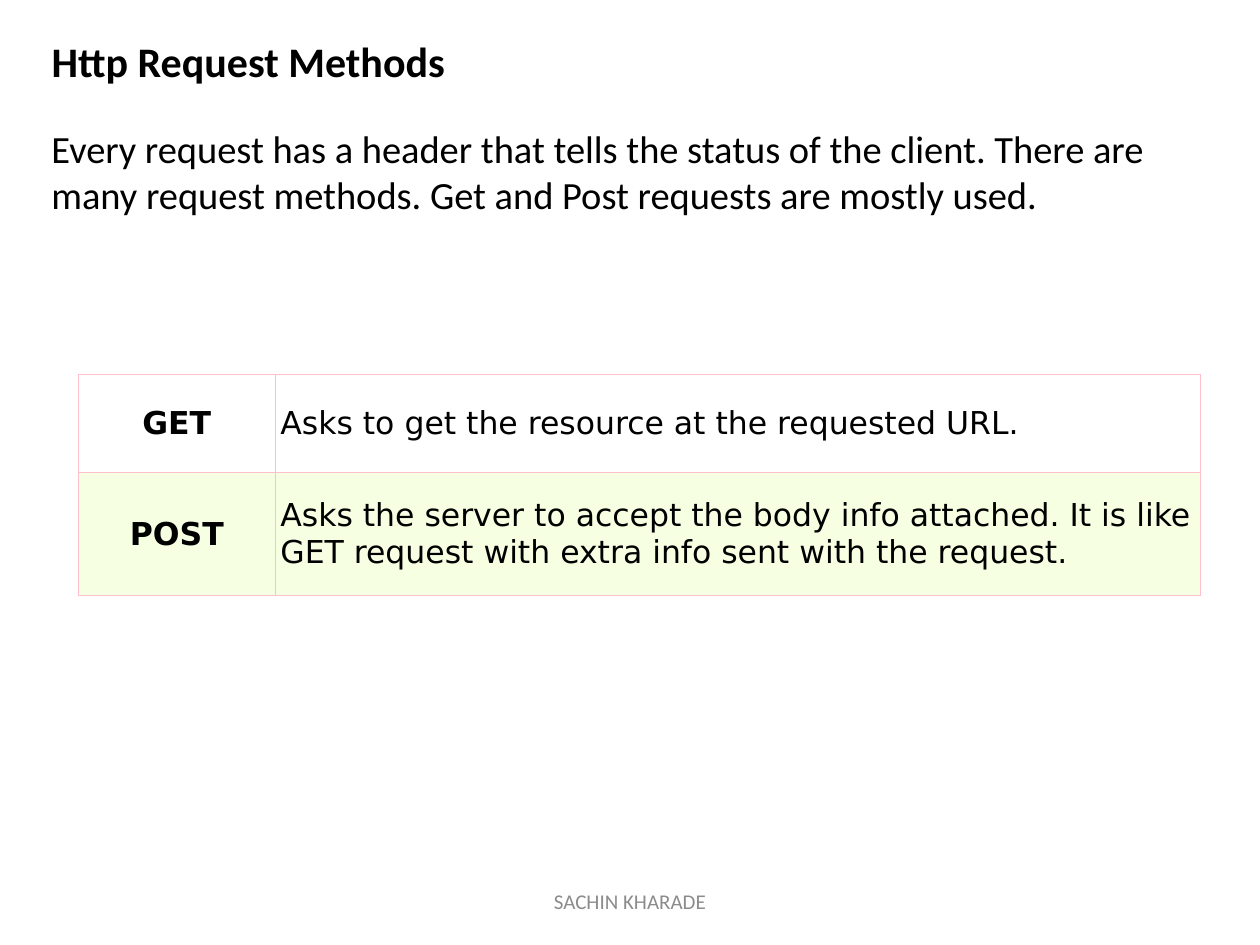
from dataclasses import dataclass

import pptx
import pptx.dml.color
import pptx.enum.text
import pptx.oxml.ns
import pptx.util
from lxml import etree

Pt = pptx.util.Pt
Align = pptx.enum.text.PP_ALIGN
Anchor = pptx.enum.text.MSO_ANCHOR

COLORS = {
    "text": "000000",
    "footer": "8C8C8C",
    "border": "FFC0CB",
    "plain": "FFFFFF",
    "tinted": "F6FFE1",
}
LEFT, WIDTH = 22.3, 663.8


@dataclass
class MethodRow:
    name: str
    description: str
    fill: str
    height: float


METHODS = [
    MethodRow("GET", "Asks to get the resource at the requested URL.", "plain", 56),
    MethodRow(
        "POST",
        "Asks the server to accept the body info attached. It is like "
        "GET request with extra info sent with the request.",
        "tinted", 70.5,
    ),
]
COLUMN_WIDTHS = [112.5, 528.5]


def rgb(color: str) -> pptx.dml.color.RGBColor:
    return pptx.dml.color.RGBColor.from_string(COLORS[color])


def write(frame, text: str, *, size: float, font: str = "Calibri", color: str = "text",
          bold: bool = False, align=Align.LEFT, anchor=Anchor.TOP) -> None:
    frame.word_wrap = True
    frame.vertical_anchor = anchor
    para = frame.paragraphs[0]
    para.alignment = align
    span = para.add_run()
    span.text = text
    span.font.size = Pt(size)
    span.font.name = font
    span.font.bold = bold
    span.font.color.rgb = rgb(color)


def add_text(page, left: float, top: float, width: float, height: float,
             text: str, **style) -> None:
    box = page.shapes.add_textbox(Pt(left), Pt(top), Pt(width), Pt(height))
    write(box.text_frame, text, **style)


def add_borders(cell) -> None:
    properties = cell._tc.get_or_add_tcPr()
    for side in ("a:lnL", "a:lnR", "a:lnT", "a:lnB"):
        line = etree.SubElement(properties, pptx.oxml.ns.qn(side), w=str(Pt(0.75)))
        fill = etree.SubElement(line, pptx.oxml.ns.qn("a:solidFill"))
        etree.SubElement(fill, pptx.oxml.ns.qn("a:srgbClr"), val=COLORS["border"])


def fill_cell(cell, text: str, fill: str, **style) -> None:
    cell.margin_left = cell.margin_right = Pt(3)
    cell.margin_top = cell.margin_bottom = Pt(3)
    write(cell.text_frame, text, size=18, font="DejaVu Sans", **style)
    cell.vertical_anchor = Anchor.MIDDLE
    add_borders(cell)
    cell.fill.solid()
    cell.fill.fore_color.rgb = rgb(fill)


def add_method_table(page, left: float, top: float, rows: list[MethodRow]) -> None:
    frame = page.shapes.add_table(
        len(rows), len(COLUMN_WIDTHS), Pt(left), Pt(top),
        Pt(sum(COLUMN_WIDTHS)), Pt(sum(row.height for row in rows)))
    table = frame.table
    table.first_row = table.horz_banding = False
    for column, width in zip(table.columns, COLUMN_WIDTHS):
        column.width = Pt(width)
    for index, row in enumerate(rows):
        table.rows[index].height = Pt(row.height)
        fill_cell(table.cell(index, 0), row.name, row.fill, bold=True, align=Align.CENTER)
        fill_cell(table.cell(index, 1), row.description, row.fill)


def main() -> None:
    deck = pptx.Presentation()
    deck.slide_width, deck.slide_height = Pt(720), Pt(540)
    page = deck.slides.add_slide(deck.slide_layouts[5])

    # Title
    title = page.shapes.title
    title.left, title.top = Pt(LEFT), Pt(16.6)
    title.width, title.height = Pt(WIDTH), Pt(36.5)
    title.text_frame.auto_size = pptx.enum.text.MSO_AUTO_SIZE.NONE
    write(title.text_frame, "Http Request Methods", size=24, bold=True)

    # Introduction
    add_text(page, LEFT, 67.8, WIDTH, 60.8,
             "Every request has a header that tells the status of the client. There are "
             "many request methods. Get and Post requests are mostly used.", size=22)

    # Request methods
    add_method_table(page, 44.8, 214, METHODS)

    # Footer
    add_text(page, 246, 500.5, 228, 28.75, "SACHIN KHARADE", size=12, color="footer",
             align=Align.CENTER, anchor=Anchor.MIDDLE)

    deck.save("out.pptx")


if __name__ == "__main__":
    main()
